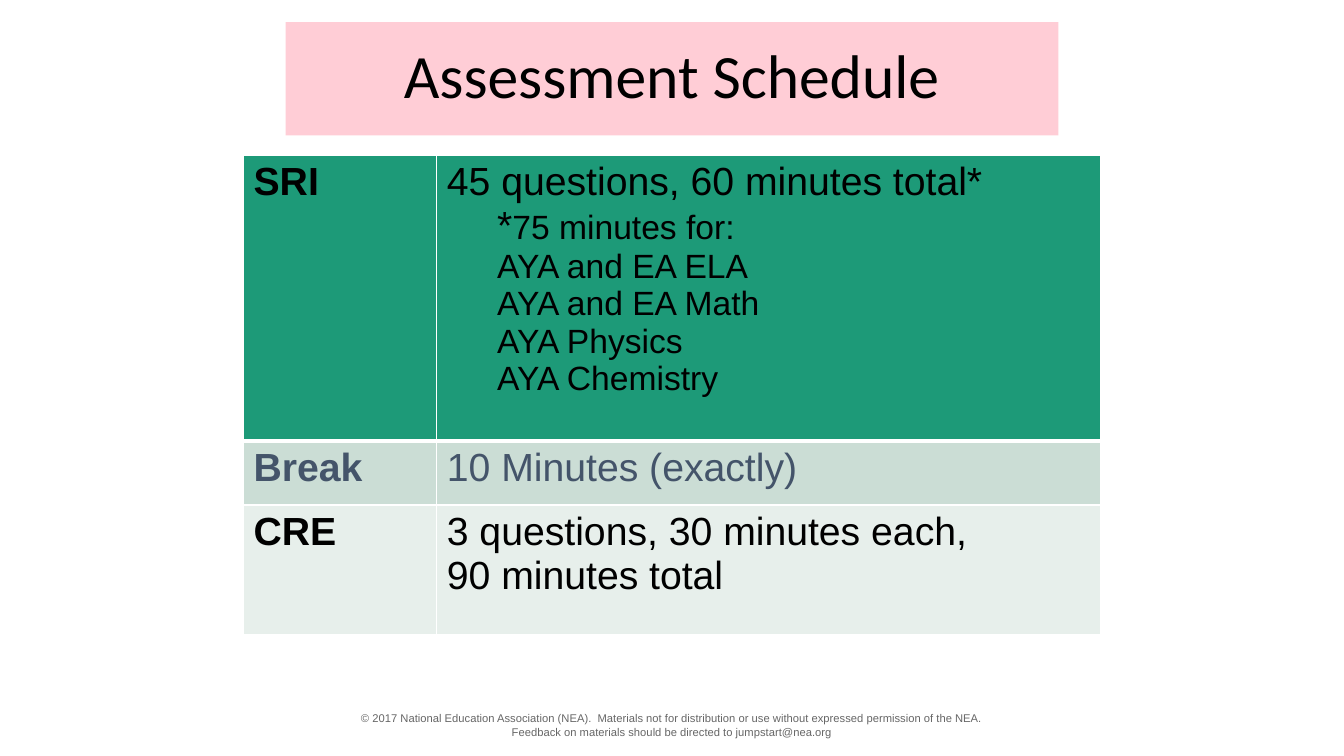
from lxml import etree
from pptx import Presentation
from pptx.dml.color import RGBColor
from pptx.enum.text import MSO_ANCHOR, PP_ALIGN
from pptx.oxml.ns import qn
from pptx.util import Pt

PX = 9525
CENTER = PP_ALIGN.CENTER
MIDDLE = MSO_ANCHOR.MIDDLE
TITLE_ONLY = 5

BLACK = RGBColor(0x00, 0x00, 0x00)
WHITE = RGBColor(0xFF, 0xFF, 0xFF)
PINK = RGBColor(0xFF, 0xCD, 0xD6)
GREEN = RGBColor(0x1D, 0x9A, 0x78)
SAGE = RGBColor(0xCB, 0xDD, 0xD5)
PALE = RGBColor(0xE7, 0xEF, 0xEB)
SLATE = RGBColor(0x44, 0x54, 0x6A)
GREY = RGBColor(0x66, 0x66, 0x66)

COLUMN_WIDTHS = (184, 632)
SCHEDULE = [
    ("SRI", ["45 questions, 60 minutes total*"],
     ["*75 minutes for:", "AYA and EA ELA", "AYA and EA Math",
      "AYA Physics", "AYA Chemistry"], 272, GREEN, BLACK),
    ("Break", ["10 Minutes (exactly)"], [], 61, SAGE, SLATE),
    ("CRE", ["3 questions, 30 minutes each,", "90 minutes total"], [],
     123, PALE, BLACK),
]
FOOTER = [
    "© 2017 National Education Association (NEA).  Materials not for "
    "distribution or use without expressed permission of the NEA.",
    "Feedback on materials should be directed to jumpstart@nea.org",
]


def to_emu(box):
    return [length * PX for length in box]


def style(span, size, color, name="Arial", bold=False):
    span.font.size = Pt(size)
    span.font.name = name
    span.font.bold = bold
    span.font.color.rgb = color


def add_title(page, box):
    title = page.shapes.title
    title.left, title.top, title.width, title.height = to_emu(box)
    title.fill.solid()
    title.fill.fore_color.rgb = PINK
    frame = title.text_frame
    frame.text = "Assessment Schedule"
    frame.vertical_anchor = MIDDLE
    para = frame.paragraphs[0]
    para.alignment = CENTER
    para.line_spacing = 0.9
    style(para.runs[0], 44, BLACK, "Calibri")


def set_borders(cell, widths):
    properties = cell._tc.get_or_add_tcPr()
    for side, width in widths.items():
        line = etree.SubElement(properties, qn(f"a:ln{side}"), w=str(Pt(width)))
        fill = etree.SubElement(line, qn("a:solidFill"))
        etree.SubElement(fill, qn("a:srgbClr"), val=str(WHITE))


def fill_cell(cell, lines, notes, color, bold):
    cell.text = "\n".join(lines + notes)
    for index, para in enumerate(cell.text_frame.paragraphs):
        is_note = index >= len(lines)
        if is_note:
            para.level = 1
            properties = para._p.get_or_add_pPr()
            properties.set("marL", str(48 * PX))
            properties.set("indent", "0")
        if is_note and para.text.startswith("*"):
            rest = para.text[1:]
            para.text = "*"
            style(para.runs[0], 28, color)
            span = para.add_run()
            span.text = rest
        style(para.runs[-1], 24 if is_note else 28, color, bold=bold)


def add_schedule(page, box):
    frame = page.shapes.add_table(len(SCHEDULE), len(COLUMN_WIDTHS), *to_emu(box))
    table = frame.table
    table.horz_banding = False
    for column, width in zip(table.columns, COLUMN_WIDTHS):
        column.width = width * PX
    for index, (label, lines, notes, height, fill, color) in enumerate(SCHEDULE):
        row = table.rows[index]
        row.height = height * PX
        fill_cell(row.cells[0], [label], [], color, True)
        fill_cell(row.cells[1], lines, notes, color, False)
        top = 3 if index == 1 else 1
        bottom = 3 if index == 0 else 1
        for cell in row.cells:
            set_borders(cell, {"L": 1, "R": 1, "T": top, "B": bottom})
            cell.fill.solid()
            cell.fill.fore_color.rgb = fill


def add_footer(page, box):
    frame = page.shapes.add_textbox(*to_emu(box)).text_frame
    frame.word_wrap = True
    frame.text = "\n".join(FOOTER)
    for para in frame.paragraphs:
        para.alignment = CENTER
        style(para.runs[0], 8, GREY)


def main():
    deck = Presentation()
    deck.slide_width, deck.slide_height = to_emu((1280, 720))
    page = deck.slides.add_slide(deck.slide_layouts[TITLE_ONLY])
    add_title(page, (272, 21, 736, 108))
    add_schedule(page, (232, 148, sum(COLUMN_WIDTHS), 456))
    add_footer(page, (160, 673, 960, 36))
    deck.save("out.pptx")


if __name__ == "__main__":
    main()
